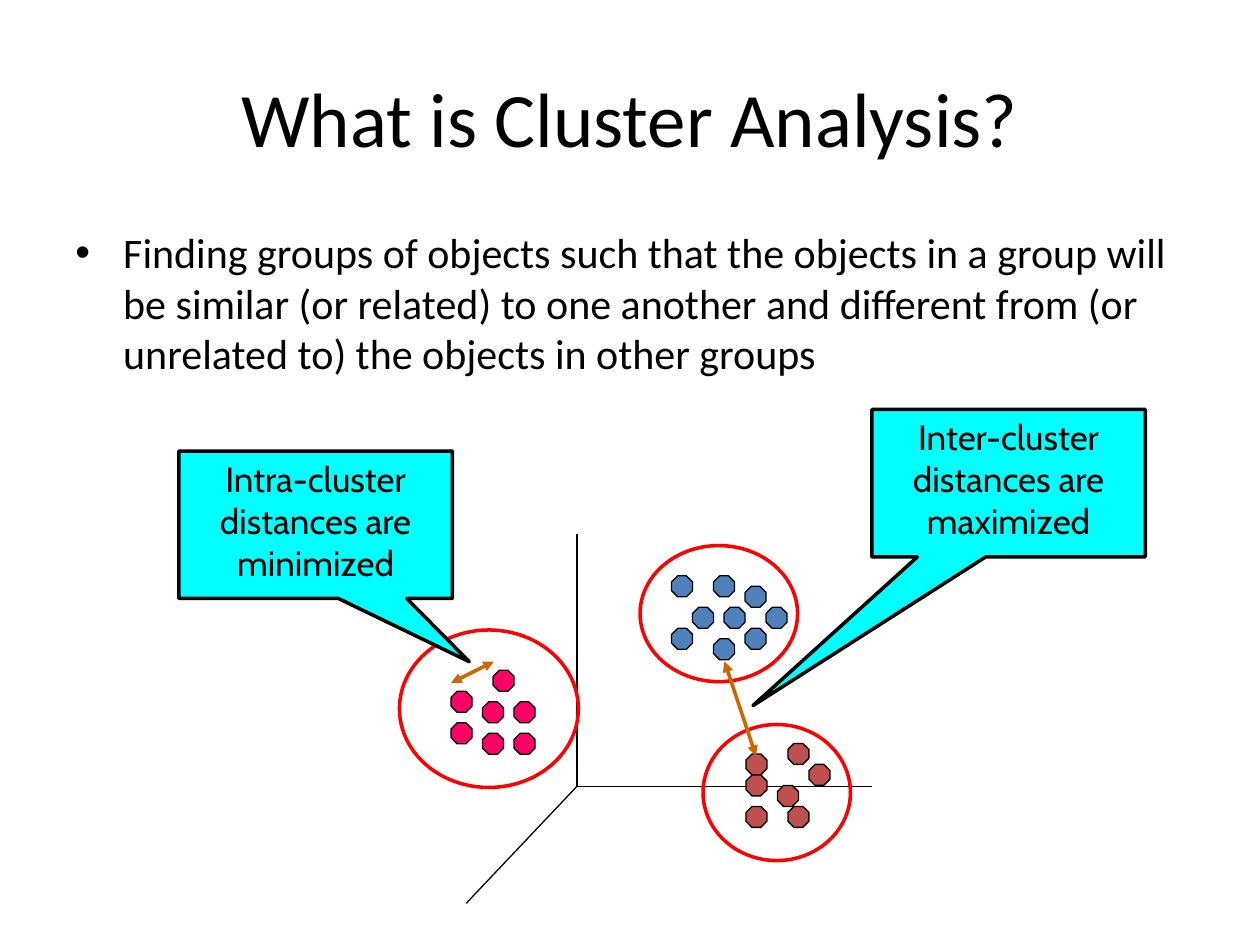
from dataclasses import dataclass

from pptx import Presentation
from pptx import util as u
from pptx.dml.color import RGBColor
from pptx.enum import shapes, text
from pptx.oxml.ns import qn
from lxml import etree

Inches = u.Inches


@dataclass(frozen=True)
class Theme:
    """Colours, fonts, type sizes and line widths of the slide."""
    ink: str = "000000"
    callout: str = "00FFFF"
    ring: str = "FF0000"
    arrow: str = "CC6600"
    blue: str = "4F81BD"
    pink: str = "FF0066"
    red: str = "C0504D"
    body_font: str = "Calibri"
    callout_font: str = "Cabin"
    title_size: int = 44
    body_size: int = 24
    callout_size: int = 20
    thin: float = 0.75
    thick: float = 2


THEME = Theme()
GRID = 1 / 12
DOT = 2 * GRID


def set_text(shape, wording, size, font=THEME.body_font, align=text.PP_ALIGN.CENTER,
             anchor=text.MSO_ANCHOR.TOP):
    """Write one formatted paragraph into a shape and return it."""
    frame = shape.text_frame
    frame.word_wrap = True
    frame.auto_size = text.MSO_AUTO_SIZE.NONE
    frame.vertical_anchor = anchor
    paragraph = frame.paragraphs[0]
    paragraph.alignment = align
    run = paragraph.add_run()
    run.text = wording
    run.font.size = u.Pt(size)
    run.font.name = font
    run.font.color.rgb = RGBColor.from_string(THEME.ink)
    return paragraph


def add_figure(slide, kind, box, fill=None, line=THEME.ink, width=THEME.thin):
    """Add a preset shape without a shadow."""
    shape = slide.shapes.add_shape(kind, *map(Inches, box))
    shape.shadow.inherit = False
    if fill:
        shape.fill.solid()
        shape.fill.fore_color.rgb = RGBColor.from_string(fill)
    else:
        shape.fill.background()
    shape.line.color.rgb = RGBColor.from_string(line)
    shape.line.width = u.Pt(width)
    return shape


def add_line(slide, start, end, color=THEME.ink, width=THEME.thin, arrows=False):
    """Add a straight line, with arrowheads at both ends if asked."""
    line = slide.shapes.add_connector(shapes.MSO_CONNECTOR.STRAIGHT,
                                      *map(Inches, (*start, *end)))
    line.line.color.rgb = RGBColor.from_string(color)
    line.line.width = u.Pt(width)
    if arrows:
        outline = line.line._get_or_add_ln()
        for tag in ("a:headEnd", "a:tailEnd"):
            etree.SubElement(outline, qn(tag), type="triangle")
    etree.SubElement(line._element.spPr, qn("a:effectLst"))


def add_title(slide, box, wording):
    """Place and fill the title placeholder."""
    title = slide.shapes.title
    title.left, title.top, title.width, title.height = map(Inches, box)
    set_text(title, wording, THEME.title_size, anchor=text.MSO_ANCHOR.MIDDLE)


def add_definition(slide, box, wording):
    """Add the bulleted definition."""
    shape = slide.shapes.add_textbox(*map(Inches, box))
    paragraph = set_text(shape, wording, THEME.body_size, align=text.PP_ALIGN.LEFT)
    properties = paragraph._p.get_or_add_pPr()
    properties.set("marL", str(Inches(0.38)))
    properties.set("indent", str(-Inches(0.38)))
    etree.SubElement(properties, qn("a:buFont"), typeface="Arial")
    etree.SubElement(properties, qn("a:buChar"), char="•")


def add_axes(slide, box):
    """Draw three axes that meet inside the box."""
    left, top, width, height = box
    origin = (left + 0.88, top + 2)
    for end in ((origin[0], top), (left + width, origin[1]), (left, top + height)):
        add_line(slide, origin, end)


def add_cluster(slide, box, color, inset, cells):
    """Draw grid-placed points and the ring around them."""
    left, top = box[0] + inset[0], box[1] + inset[1]
    for column, row in cells:
        add_figure(slide, shapes.MSO_SHAPE.OCTAGON,
                   (left + column * GRID, top + row * GRID, DOT, DOT), color)
    add_figure(slide, shapes.MSO_SHAPE.OVAL, box, line=THEME.ring, width=THEME.thick)


def add_callout(slide, box, wording, pointer):
    """Add a callout whose pointer is a share of its size from its centre."""
    callout = add_figure(slide, shapes.MSO_SHAPE.RECTANGULAR_CALLOUT, box,
                         THEME.callout, width=THEME.thick)
    callout.adjustments[0], callout.adjustments[1] = pointer
    set_text(callout, wording, THEME.callout_size, THEME.callout_font)


def add_diagram(slide, box):
    """Draw axes, clusters, distance arrows and callouts in the box."""
    left, top = box[:2]

    def place(x, y, *size):
        """Shift a point or box into the diagram."""
        return (left + x, top + y, *size)

    add_axes(slide, place(2.28, 0.99, 3.22, 2.93))
    clusters = (
        (place(3.66, 1.08, 1.25, 1.08), THEME.blue, (0.25, 0.24),
         ((2, 3), (5, 3), (4, 0), (4, 6), (9, 3), (7, 1), (0, 0), (7, 5), (0, 5))),
        (place(1.75, 1.75, 1.42, 1.25), THEME.pink, (0.41, 0.32),
         ((0, 2), (3, 3), (3, 6), (6, 3), (4, 0), (6, 6), (0, 5))),
        (place(4.16, 2.5, 1.17, 1.08), THEME.red, (0.34, 0.15),
         ((0, 1), (6, 2), (3, 4), (0, 6), (4, 6), (0, 3), (4, 0))),
    )
    for cluster in clusters:
        add_cluster(slide, *cluster)

    distances = (
        ((4.58, 2.75), (4.33, 2), (5.5, 0),
         "Inter-cluster distances are maximized", (-0.935, 1.509)),
        ((2.16, 2.17), (2.5, 2), (0, 0.33),
         "Intra-cluster distances are minimized", (0.562, 0.929)),
    )
    for start, end, corner, wording, pointer in distances:
        add_line(slide, place(*start), place(*end), THEME.arrow, THEME.thick, arrows=True)
        add_callout(slide, place(*corner, 2.17, 1.17), wording, pointer)


def main():
    """Build and save the slide."""
    presentation = Presentation()
    presentation.slide_width, presentation.slide_height = Inches(10), Inches(7.5)
    slide = presentation.slides.add_slide(presentation.slide_layouts[5])
    add_title(slide, (0.5, 0.3, 9, 1.25), "What is Cluster Analysis?")
    add_definition(slide, (0.5, 1.75, 9, 1.24),
                   "Finding groups of objects such that the objects in a group will be "
                   "similar (or related) to one another and different from (or unrelated "
                   "to) the objects in other groups")
    add_diagram(slide, (1.42, 3.25, 7.67, 3.92))
    presentation.save("out.pptx")


if __name__ == "__main__":
    main()
